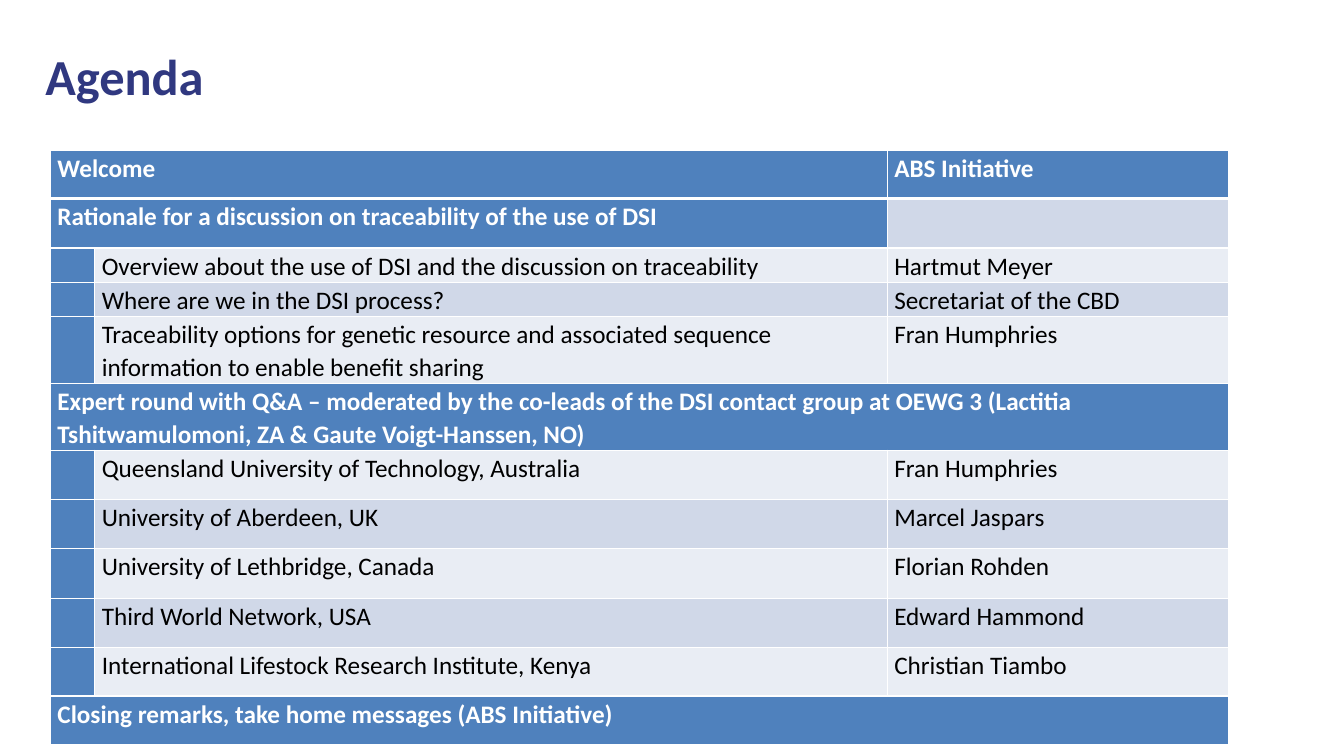
from dataclasses import dataclass

from lxml.etree import SubElement
from pptx import Presentation
from pptx.dml.color import RGBColor as Rgb
from pptx.enum.text import MSO_ANCHOR as Anchor, PP_ALIGN as Align
from pptx.oxml.ns import qn
from pptx.util import Inches, Pt


@dataclass(frozen=True)
class Theme:
    font: str = "Calibri"
    navy: str = "303880"
    blue: str = "4F81BD"
    bands: tuple = ("E9EDF4", "D0D8E8")
    white: str = "FFFFFF"
    black: str = "000000"
    head: int = 36
    text: int = 18


LOOK = Theme()
COLS = (0.44, 7.86, 3.39)

# Kind of row, height, topic, speaker
# "pair": blue topic and blue speaker, "part": blue topic only,
# "item": indented topic and speaker, "full": blue across the table
ROWS = (
    ("pair", 0.48, "Welcome", "ABS Initiative"),
    ("part", 0.49, "Rationale for a discussion on traceability of the use of DSI", ""),
    ("item", 0.34, "Overview about the use of DSI and the discussion on traceability",
     "Hartmut Meyer"),
    ("item", 0.34, "Where are we in the DSI process?", "Secretariat of the CBD"),
    ("item", 0.66, "Traceability options for genetic resource and associated sequence "
     "information to enable benefit sharing", "Fran Humphries"),
    ("full", 0.66, "Expert round with Q&A – moderated by the co-leads of the DSI contact "
     "group at OEWG 3 (Lactitia Tshitwamulomoni, ZA & Gaute Voigt-Hanssen, NO)", ""),
    ("item", 0.49, "Queensland University of Technology, Australia", "Fran Humphries"),
    ("item", 0.49, "University of Aberdeen, UK", "Marcel Jaspars"),
    ("item", 0.49, "University of Lethbridge, Canada", "Florian Rohden"),
    ("item", 0.49, "Third World Network, USA", "Edward Hammond"),
    ("item", 0.48, "International Lifestock Research Institute, Kenya", "Christian Tiambo"),
    ("full", 0.48, "Closing remarks, take home messages (ABS Initiative)", ""),
)


def put(obj, vals):
    for name, val in vals.items():
        setattr(obj, name, val)


def style(font, size, color, bold):
    put(font, {"name": LOOK.font, "size": Pt(size), "bold": bold})
    font.color.rgb = Rgb.from_string(color)


def edge(cell, base):
    """Draw white lines round a cell, with the given width below it."""
    props = cell._tc.get_or_add_tcPr()
    for side, width in (("L", 1), ("R", 1), ("T", 1), ("B", base)):
        line = SubElement(props, qn(f"a:ln{side}"), w=str(Pt(width)))
        fill = SubElement(line, qn("a:solidFill"))
        SubElement(fill, qn("a:srgbClr"), val=LOOK.white)


def paint(cell, text, fill, base):
    edge(cell, base)
    cell.fill.solid()
    cell.fill.fore_color.rgb = Rgb.from_string(fill)
    put(cell, {"margin_left": Inches(0.07), "margin_right": Inches(0.07),
               "margin_top": Inches(0.01), "margin_bottom": 0,
               "vertical_anchor": Anchor.TOP})
    para = cell.text_frame.paragraphs[0]
    put(para, {"line_spacing": 1.07, "space_after": Pt(6)})
    dark = fill == LOOK.blue
    style(para.font, LOOK.text, LOOK.white if dark else LOOK.black, dark)
    if text:
        run = para.add_run()
        run.text = text
        style(run.font, LOOK.text, LOOK.white if dark else LOOK.black, dark)


def title(slide, text, left, top, width, height):
    shape = slide.shapes.title
    put(shape, {"left": Inches(left), "top": Inches(top),
                "width": Inches(width), "height": Inches(height)})
    frame = shape.text_frame
    frame.text = text
    put(frame, {"vertical_anchor": Anchor.TOP, "margin_top": Inches(0.09),
                "margin_left": Inches(0.1), "word_wrap": True})
    para = frame.paragraphs[0]
    para.alignment = Align.LEFT
    style(para.runs[0].font, LOOK.head, LOOK.navy, True)


def agenda(slide, left, top):
    high = sum(row[1] for row in ROWS)
    table = slide.shapes.add_table(
        len(ROWS), len(COLS), Inches(left), Inches(top),
        Inches(sum(COLS)), Inches(high)).table
    put(table, {"first_row": False, "horz_banding": False})
    for col, width in zip(table.columns, COLS):
        col.width = Inches(width)

    for num, (kind, tall, topic, who) in enumerate(ROWS):
        table.rows[num].height = Inches(tall)
        band = LOOK.bands[num % 2]
        blue = LOOK.blue
        # Texts and fills of the three columns
        texts = ("", topic, who) if kind == "item" else (topic, "", who)
        fills = {"item": (blue, band, band), "part": (blue, blue, band)}.get(kind, (blue,) * 3)
        for col, (text, fill) in enumerate(zip(texts, fills)):
            paint(table.cell(num, col), text, fill, 1 if num else 3)
        # Headings span two columns or all three
        if kind != "item":
            table.cell(num, 0).merge(table.cell(num, 2 if kind == "full" else 1))


def main():
    deck = Presentation()
    put(deck, {"slide_width": Inches(13.33), "slide_height": Inches(7.5)})
    slide = deck.slides.add_slide(deck.slide_layouts[5])
    title(slide, "Agenda", 0.35, 0.36, 7.8, 0.87)
    agenda(slide, 0.5, 1.49)
    deck.save("out.pptx")


if __name__ == "__main__":
    main()
